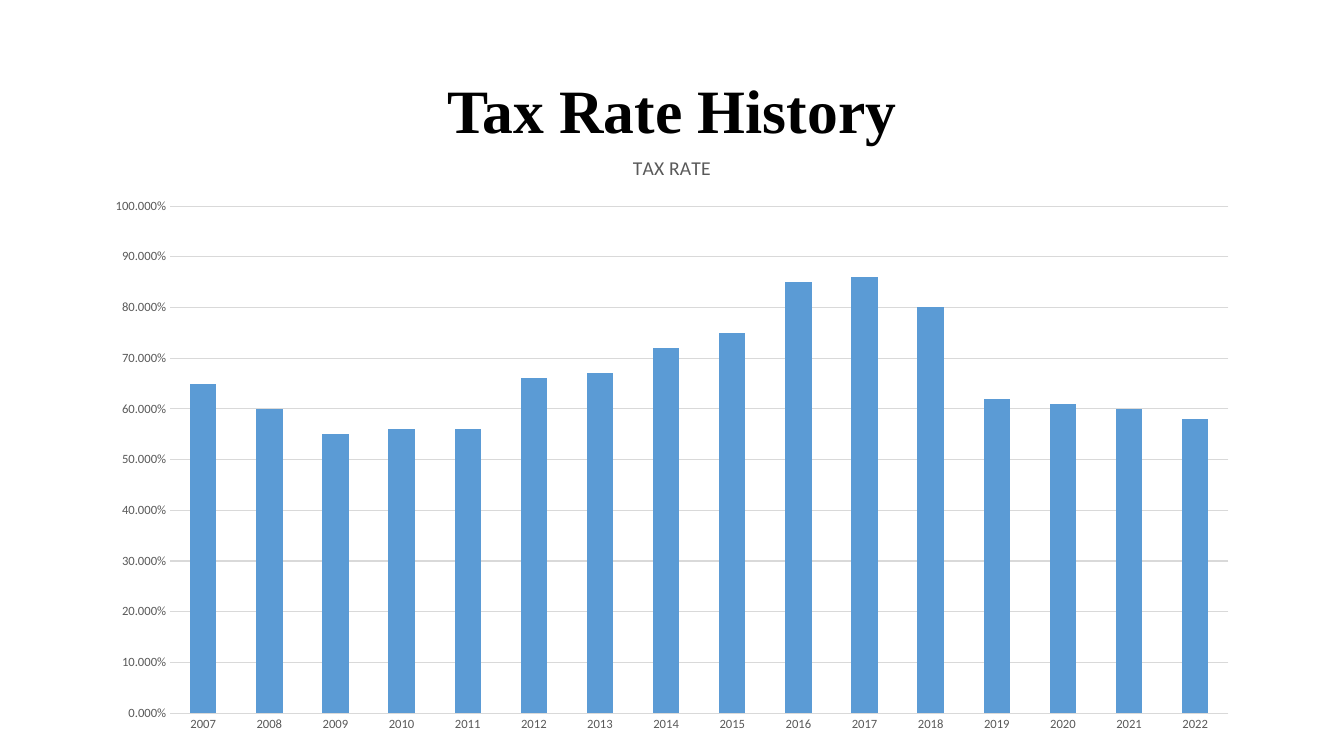
from dataclasses import dataclass

from pptx import Presentation
from pptx.chart.data import CategoryChartData
from pptx.dml.color import RGBColor
from pptx.enum.chart import XL_CHART_TYPE, XL_TICK_MARK
from pptx.enum.text import MSO_ANCHOR, MSO_AUTO_SIZE, PP_ALIGN
from pptx.util import Cm, Pt


@dataclass(frozen=True)
class Theme:
    heading_font: str = "Times New Roman"
    body_font: str = "Calibri"
    black: RGBColor = RGBColor(0x00, 0x00, 0x00)
    grey: RGBColor = RGBColor(0x59, 0x59, 0x59)
    grid: RGBColor = RGBColor(0xD9, 0xD9, 0xD9)
    bar: RGBColor = RGBColor(0x5B, 0x9B, 0xD5)
    heading_size: Pt = Pt(44)
    chart_size: Pt = Pt(10)
    chart_title_size: Pt = Pt(14)
    axis_size: Pt = Pt(9)
    grid_width: Pt = Pt(0.75)


THEME = Theme()
LEFT, WIDTH = Cm(2.33), Cm(29.21)
SERIES_NAME = "TAX RATE"
FIRST_YEAR = 2007
TAX_RATES = (
    0.65, 0.60, 0.55, 0.56, 0.56, 0.66, 0.67, 0.72,
    0.75, 0.85, 0.86, 0.80, 0.62, 0.61, 0.60, 0.58,
)


def style_font(font, name, size, color, bold=False):
    font.name = name
    font.size = size
    font.bold = bold
    font.color.rgb = color


def add_heading(page, text):
    box = page.shapes.title
    box.left, box.top, box.width, box.height = LEFT, Cm(1.01), WIDTH, Cm(3.68)
    frame = box.text_frame
    frame.word_wrap = True
    frame.auto_size = MSO_AUTO_SIZE.NONE
    frame.vertical_anchor = MSO_ANCHOR.MIDDLE
    para = frame.paragraphs[0]
    para.alignment = PP_ALIGN.CENTER
    para.line_spacing = 0.9
    span = para.add_run()
    span.text = text
    style_font(span.font, THEME.heading_font, THEME.heading_size, THEME.black, True)


def style_axis(axis):
    axis.major_tick_mark = XL_TICK_MARK.NONE
    axis.minor_tick_mark = XL_TICK_MARK.NONE
    axis.format.line.fill.background()
    style_font(axis.tick_labels.font, THEME.body_font, THEME.axis_size, THEME.grey)


def style_value_axis(axis):
    style_axis(axis)
    axis.minimum_scale = 0
    axis.maximum_scale = 1
    axis.major_unit = 0.1
    axis.tick_labels.number_format = "0.000%"
    axis.tick_labels.number_format_is_linked = False
    line = axis.major_gridlines.format.line
    line.color.rgb = THEME.grid
    line.width = THEME.grid_width


def add_chart_title(chart, text):
    chart.has_title = True
    chart.chart_title.include_in_layout = False
    span = chart.chart_title.text_frame.paragraphs[0].add_run()
    span.text = text
    style_font(span.font, THEME.body_font, THEME.chart_title_size, THEME.grey)


def add_rate_chart(page):
    rates = CategoryChartData(number_format="0.000%")
    rates.categories = [str(FIRST_YEAR + step) for step in range(len(TAX_RATES))]
    rates.add_series(SERIES_NAME, TAX_RATES)
    chart = page.shapes.add_chart(
        XL_CHART_TYPE.COLUMN_CLUSTERED, LEFT, Cm(3.35), WIDTH, Cm(15.4), rates
    ).chart
    chart.has_legend = False
    style_font(chart.font, THEME.body_font, THEME.chart_size, THEME.black)
    add_chart_title(chart, SERIES_NAME)
    style_axis(chart.category_axis)
    style_value_axis(chart.value_axis)
    plot = chart.plots[0]
    plot.gap_width = 150
    plot.vary_by_categories = False
    fill = plot.series[0].format.fill
    fill.solid()
    fill.fore_color.rgb = THEME.bar


def main():
    deck = Presentation()
    deck.slide_width, deck.slide_height = Cm(33.87), Cm(19.05)
    page = deck.slides.add_slide(deck.slide_layouts[5])
    add_heading(page, "Tax Rate History")
    add_rate_chart(page)
    deck.save("out.pptx")


if __name__ == "__main__":
    main()
